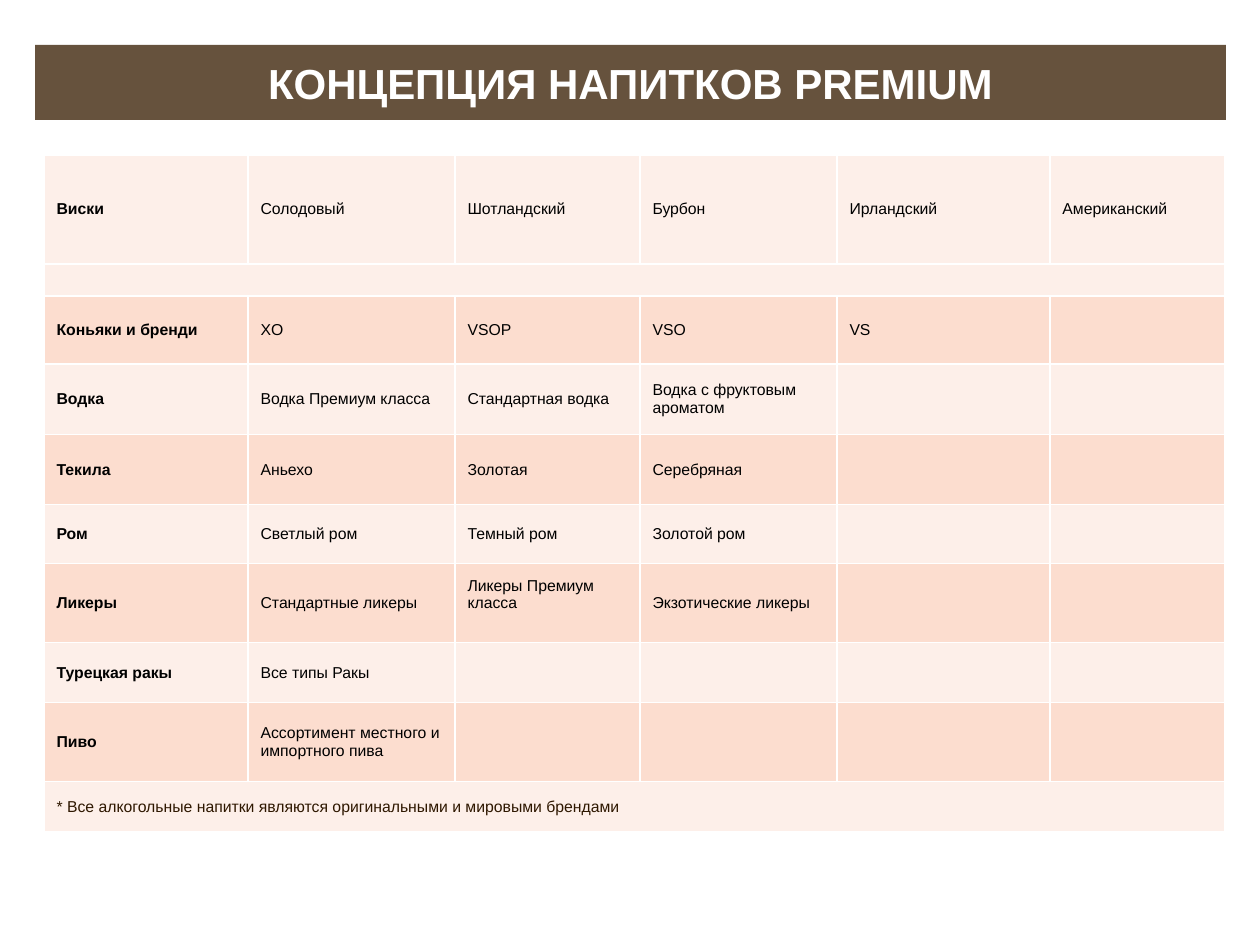
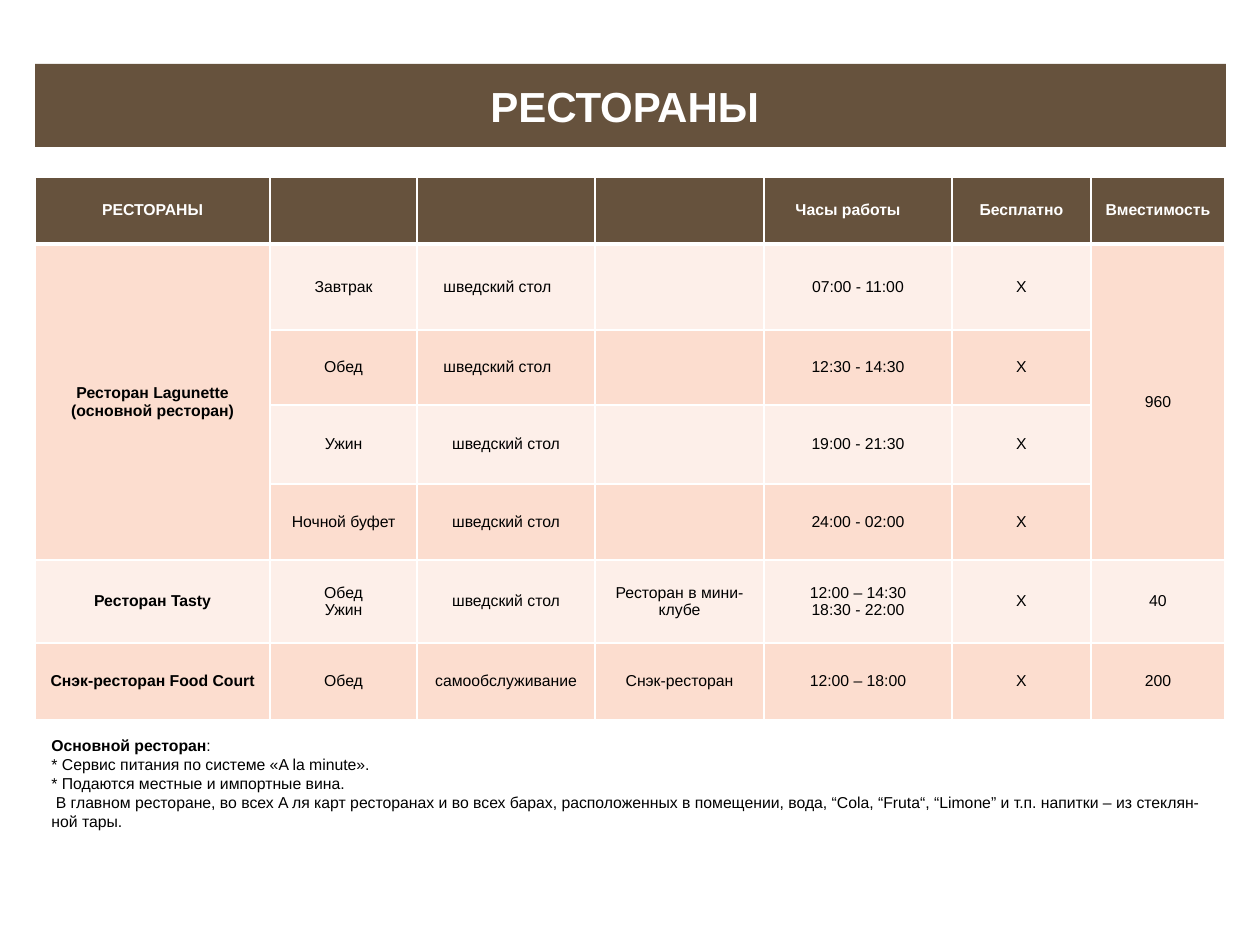
from lxml import etree
from pptx import Presentation
from pptx.dml.color import RGBColor
from pptx.enum.shapes import MSO_SHAPE
from pptx.enum.text import MSO_ANCHOR, PP_ALIGN
from pptx.oxml.ns import qn
from pptx.util import Emu, Pt

EMU_PER_PX = 914400 / 126
FONT = "Arial"
BODY_SIZE, TITLE_SIZE = 9, 24
BROWN, LIGHT, PEACH = "66523D", "FDEFE9", "FCDDCF"
WHITE, BLACK, FOOTNOTE = "FFFFFF", "000000", "2E1700"
BAND_LEFT, BAND_WIDTH = 35, 1191

DRINK_COLUMNS = [204, 207, 185, 197, 213, 175]
DRINK_HEIGHTS = [109, 30, 68, 71, 70, 59, 79, 60, 79, 50]
DRINKS = [
    ["Виски", "Cолодовый", "Шотландский", "Бурбон", "Ирландский", "Американский"],
    [],
    ["Коньяки и бренди", "XO", "VSOP", "VSO", "VS"],
    ["Водкa", "Bодка Премиум класса", "Стандартная водка", "Водка с фруктовым ароматом"],
    ["Текила", "Аньехо", "Золотая", "Серебряная"],
    ["Ром", "Cветлый ром", "Темный ром", "Золотой ром"],
    ["Ликеры", "Стандартные ликеры", "Ликеры Премиум класса", "Экзотические ликеры"],
    ["Турецкая ракы", "Все типы Ракы"],
    ["Пиво", "Ассортимент местного и импортного пива"],
    ["* Все алкогольные напитки являются оригинальными и мировыми брендами"],
]

RESTAURANT_COLUMNS = [235, 147, 178, 169, 188, 139, 134]
RESTAURANT_HEIGHTS = [67, 86, 75, 79, 76, 83, 77]
BUFFET = "шведский стол"
RESTAURANTS = [
    ["РЕСТОРАНЫ", "", "", "", "Часы работы", "Бесплатно", "Вместимость"],
    ["Ресторан Lagunette\n(основной ресторан)", "Завтрак", BUFFET, "", "07:00 - 11:00", "X", "960"],
    ["", "Обед", BUFFET, "", "12:30 - 14:30", "X"],
    ["", "Ужин", BUFFET, "", "19:00 - 21:30", "X"],
    ["", "Ночной буфет", BUFFET, "", "24:00 - 02:00", "X"],
    ["Ресторан Tasty", "Обед\nУжин", BUFFET, "Ресторан в мини-клубе",
     "12:00 – 14:30\n18:30 - 22:00", "X", "40"],
    ["Cнэк-ресторан Food Court", "Обед", "cамообслуживание", "Cнэк-ресторан",
     "12:00 – 18:00", "X", "200"],
]
DINING_NOTES = [
    "Oсновной ресторан",
    "* Сервис питания по системе «A la minute».",
    "* Подаются местные и импортные вина.",
    " В главном ресторане, во всех A ля карт ресторанах и во всех барах, расположенных "
    "в помещении, вода, “Cola, “Fruta“, “Limone” и т.п. напитки – из стеклян-ной тары.",
]


def px(length):
    return Emu(round(length * EMU_PER_PX))


def color(hex_value):
    return RGBColor.from_string(hex_value)


def style_text(frame, size, hex_value, bold=False, align=PP_ALIGN.LEFT):
    for paragraph in frame.paragraphs:
        paragraph.alignment = align
        for run in paragraph.runs:
            font = run.font
            font.name, font.size, font.bold = FONT, Pt(size), bold
            font.color.rgb = color(hex_value)


def add_title_band(slide, title, top, height):
    band = slide.shapes.add_shape(MSO_SHAPE.RECTANGLE, px(BAND_LEFT), px(top),
                                  px(BAND_WIDTH), px(height))
    band.shadow.inherit = False
    band.fill.solid()
    band.fill.fore_color.rgb = color(BROWN)
    band.line.fill.background()
    band.text_frame.text = title
    band.text_frame.vertical_anchor = MSO_ANCHOR.MIDDLE
    style_text(band.text_frame, TITLE_SIZE, WHITE, True, PP_ALIGN.CENTER)


def set_borders(cell, top=1, bottom=1):
    properties = cell._tc.get_or_add_tcPr()
    for side, width in (("L", 1), ("R", 1), ("T", top), ("B", bottom)):
        line = etree.SubElement(properties, qn(f"a:ln{side}"), w=str(Pt(width)))
        fill = etree.SubElement(line, qn("a:solidFill"))
        etree.SubElement(fill, qn("a:srgbClr"), val=WHITE)


def fill_cell(cell, text, fill, text_color, bold, align):
    cell.fill.solid()
    cell.fill.fore_color.rgb = color(fill)
    cell.vertical_anchor = MSO_ANCHOR.MIDDLE
    cell.text_frame.text = text
    style_text(cell.text_frame, BODY_SIZE, text_color, bold, align)
    if not text:  # keeps empty rows from growing to the default text size
        etree.SubElement(cell.text_frame.paragraphs[0]._p, qn("a:endParaRPr"),
                         sz=str(BODY_SIZE * 100))


def add_grid(slide, left, top, columns, heights):
    table = slide.shapes.add_table(len(heights), len(columns), px(left), px(top),
                                   px(sum(columns)), px(sum(heights))).table
    table.first_row = table.horz_banding = False
    for column, width in zip(table.columns, columns):
        column.width = px(width)
    for row, height in zip(table.rows, heights):
        row.height = px(height)
    return table


def add_drinks(slide):
    table = add_grid(slide, 44, 155, DRINK_COLUMNS, DRINK_HEIGHTS)
    last = len(DRINKS) - 1
    for r, drinks in enumerate(DRINKS):
        fill = PEACH if r > 0 and r % 2 == 0 else LIGHT
        for c in range(len(DRINK_COLUMNS)):
            cell = table.cell(r, c)
            set_borders(cell)
            fill_cell(cell, drinks[c] if c < len(drinks) else "", fill,
                      FOOTNOTE if r == last else BLACK,
                      c == 0 and r != last, PP_ALIGN.LEFT)
    for r in (1, last):
        table.cell(r, 0).merge(table.cell(r, len(DRINK_COLUMNS) - 1))
    table.cell(6, 2).margin_bottom = px(24)


def add_restaurants(slide):
    table = add_grid(slide, BAND_LEFT, 177, RESTAURANT_COLUMNS, RESTAURANT_HEIGHTS)
    edge_columns = (0, len(RESTAURANT_COLUMNS) - 1)
    for r, restaurant in enumerate(RESTAURANTS):
        header = r == 0
        for c in range(len(RESTAURANT_COLUMNS)):
            cell = table.cell(r, c)
            set_borders(cell, top=3 if r == 1 else 1, bottom=3 if header else 1)
            spans_rows = c in edge_columns and 1 <= r <= 4
            fill = BROWN if header else PEACH if spans_rows or r % 2 == 0 else LIGHT
            fill_cell(cell, restaurant[c] if c < len(restaurant) else "", fill,
                      WHITE if header else BLACK, header or c == 0, PP_ALIGN.CENTER)
            if header or c in edge_columns:
                cell.margin_left = cell.margin_right = 0
                cell.margin_top = cell.margin_bottom = 0
    for c in edge_columns:
        table.cell(1, c).merge(table.cell(4, c))
    table.cell(0, 4).margin_right = px(20)
    for r in (1, 2):
        table.cell(r, 2).margin_right = px(30)


def add_dining_notes(slide):
    frame = slide.shapes.add_textbox(px(39), px(730), px(1181), px(108)).text_frame
    frame.word_wrap = True
    frame.text = "\n".join(DINING_NOTES)
    heading = frame.paragraphs[0]
    heading.add_run().text = ":"
    style_text(frame, BODY_SIZE, BLACK)
    heading.runs[0].font.bold = True


def main():
    presentation = Presentation()
    presentation.slide_width, presentation.slide_height = px(1260), px(945)
    blank = presentation.slide_layouts[6]

    drinks = presentation.slides.add_slide(blank)
    add_title_band(drinks, "КОНЦЕПЦИЯ НАПИТКОВ PREMIUM", 45, 75)
    add_drinks(drinks)

    restaurants = presentation.slides.add_slide(blank)
    add_title_band(restaurants, "РЕСТОРАНЫ ", 64, 83)
    add_restaurants(restaurants)
    add_dining_notes(restaurants)

    presentation.save("out.pptx")


if __name__ == "__main__":
    main()
